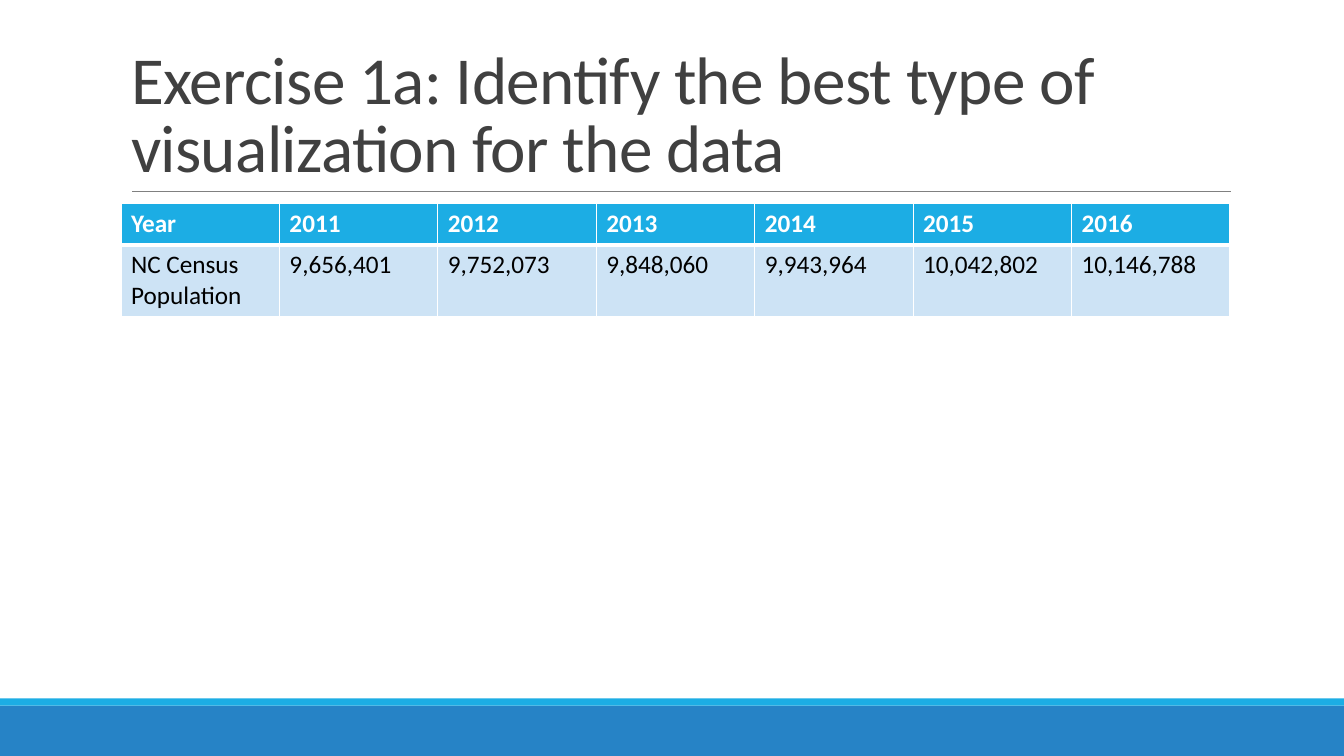
import pptx
import pptx.util
import pptx.dml.color
import pptx.enum.shapes
import pptx.enum.text
import pptx.oxml
import pptx.oxml.ns
import lxml.etree

Inches = pptx.util.Inches
Pt = pptx.util.Pt

FONT = "Calibri"
WHITE = "FFFFFF"
SKY = "1CADE4"
BLUE = "2683C6"
PALE = "CDE3F5"

CENSUS = [
    ["Year", "2011", "2012", "2013", "2014", "2015", "2016"],
    ["NC Census Population", "9,656,401", "9,752,073", "9,848,060",
     "9,943,964", "10,042,802", "10,146,788"],
]
ROWS = [
    {"high": 0.41, "fill": SKY, "ink": WHITE, "bold": True,
     "edge": {"L": 1, "R": 1, "T": 1, "B": 3}},
    {"high": 0.7, "fill": PALE, "ink": "000000", "bold": False,
     "edge": {"L": 1, "R": 1, "T": 3, "B": 1}},
]


def paint(color, code):
    color.rgb = pptx.dml.color.RGBColor.from_string(code)


def assign(item, values):
    for name, value in values.items():
        setattr(item, name, value)


def style(run, size, code, bold=False):
    assign(run.font, {"name": FONT, "size": Pt(size), "bold": bold})
    paint(run.font.color, code)


def add_bar(slide, top, high, code):
    bar = slide.shapes.add_shape(
        pptx.enum.shapes.MSO_SHAPE.RECTANGLE,
        0, Inches(top), Inches(13.33), Inches(high))
    bar.shadow.inherit = False
    bar.fill.solid()
    paint(bar.fill.fore_color, code)
    bar.line.fill.background()


def add_rule(slide, left, right, top):
    rule = slide.shapes.add_connector(
        pptx.enum.shapes.MSO_CONNECTOR.STRAIGHT,
        Inches(left), Inches(top), Inches(right), Inches(top))
    rule.line.width = Pt(0.5)
    paint(rule.line.color, "808080")
    lxml.etree.SubElement(
        rule.element.spPr, pptx.oxml.ns.qn("a:effectLst"))


def set_title(slide, text):
    title = slide.shapes.title
    assign(title, {"left": Inches(1.2), "top": Inches(0.31),
                   "width": Inches(11), "height": Inches(1.59)})
    frame = title.text_frame
    assign(frame, {"word_wrap": True,
                   "auto_size": pptx.enum.text.MSO_AUTO_SIZE.NONE,
                   "vertical_anchor": pptx.enum.text.MSO_ANCHOR.BOTTOM})
    para = frame.paragraphs[0]
    assign(para, {"alignment": pptx.enum.text.PP_ALIGN.LEFT,
                  "line_spacing": 0.85})
    run = para.add_run()
    run.text = text
    style(run, 48, "404040")
    run.font._element.set("spc", "-50")


def add_edge(cell, side, width):
    props = cell._tc.get_or_add_tcPr()
    props.append(pptx.oxml.parse_xml(
        f'<a:ln{side} {pptx.oxml.ns.nsdecls("a")} w="{Pt(width)}">'
        f'<a:solidFill><a:srgbClr val="{WHITE}"/></a:solidFill>'
        f'</a:ln{side}>'))


def fill_cell(cell, text, look):
    for side, width in look["edge"].items():
        add_edge(cell, side, width)
    cell.fill.solid()
    paint(cell.fill.fore_color, look["fill"])
    run = cell.text_frame.paragraphs[0].add_run()
    run.text = text
    style(run, 18, look["ink"], look["bold"])


def add_grid(slide, data, looks):
    grid = slide.shapes.add_table(
        len(data), len(data[0]), Inches(1.2), Inches(2.02),
        Inches(11), Inches(1.11)).table
    for row, texts, look in zip(grid.rows, data, looks):
        row.height = Inches(look["high"])
        for cell, text in zip(row.cells, texts):
            fill_cell(cell, text, look)


def main():
    deck = pptx.Presentation()
    assign(deck, {"slide_width": Inches(13.33),
                  "slide_height": Inches(7.5)})
    slide = deck.slides.add_slide(deck.slide_layouts[5])
    add_bar(slide, 7, 0.5, BLUE)
    add_bar(slide, 6.93, 0.07, SKY)
    add_rule(slide, 1.31, 12.21, 1.9)
    set_title(slide, "Exercise 1a: Identify the best type of "
                     "visualization for the data")
    add_grid(slide, CENSUS, ROWS)
    deck.save("out.pptx")


if __name__ == "__main__":
    main()
